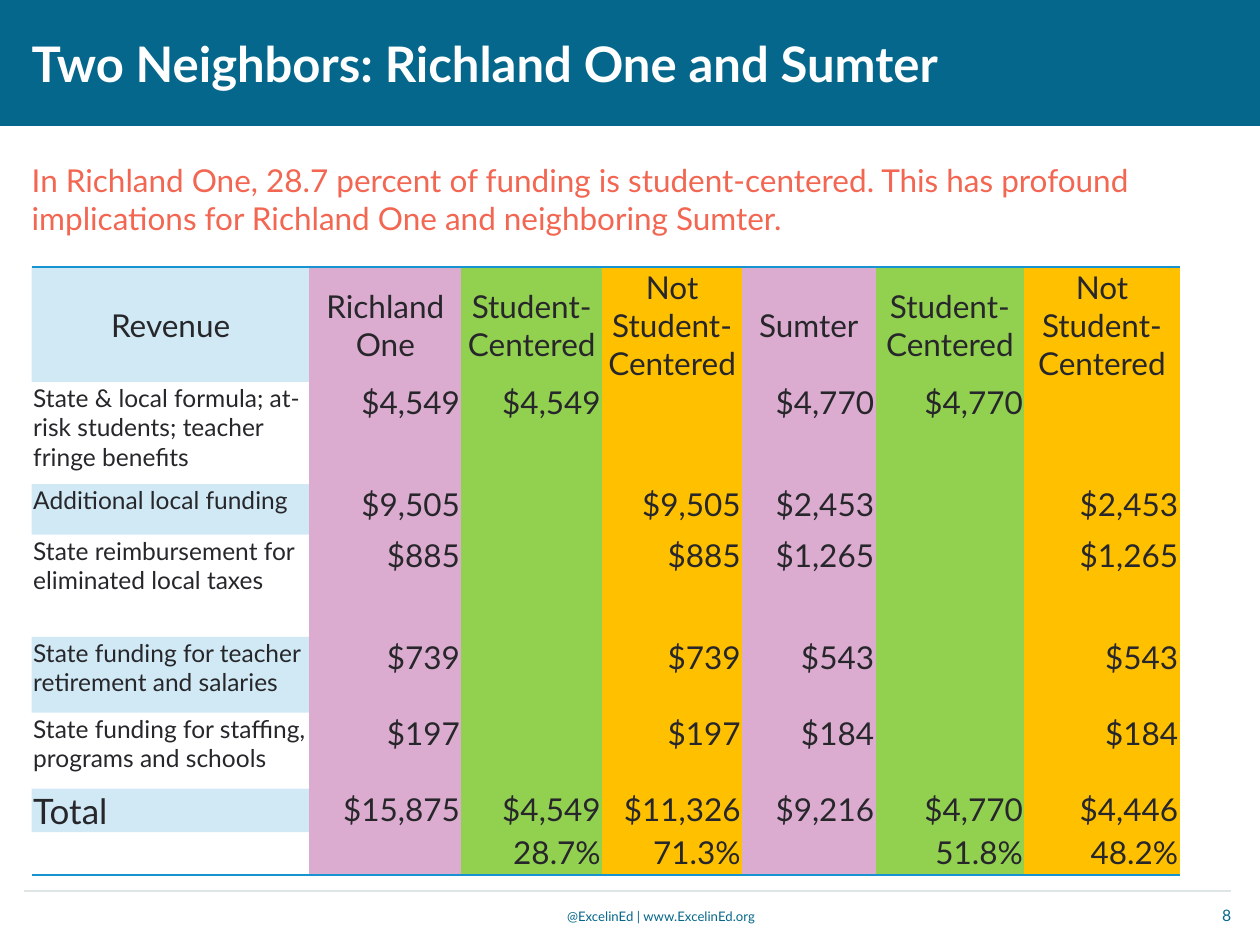
"""Build the slide comparing school funding in Richland One and Sumter."""
from dataclasses import dataclass

from lxml import etree
from pptx import Presentation
from pptx.dml.color import RGBColor
from pptx.enum.shapes import MSO_CONNECTOR, MSO_SHAPE
from pptx.enum.text import MSO_ANCHOR, MSO_AUTO_SIZE, PP_ALIGN
from pptx.oxml import parse_xml
from pptx.oxml.ns import nsdecls, qn
from pptx.util import Cm, Pt

LEFT, CENTER, RIGHT = PP_ALIGN.LEFT, PP_ALIGN.CENTER, PP_ALIGN.RIGHT
TOP, MIDDLE = MSO_ANCHOR.TOP, MSO_ANCHOR.MIDDLE
NO_GRID_STYLE = "{2D5ABB26-0587-4C30-8999-92F81FD0307C}"


@dataclass(frozen=True)
class Theme:
    """Colours and type sizes of the deck."""

    font: str = "Lato"
    teal: str = "05678B"
    white: str = "FFFFFF"
    coral: str = "F26652"
    ink: str = "27272B"
    rule: str = "DFE4E5"
    blue: str = "1893D1"
    district: str = "DBACCF"
    centered: str = "92D050"
    not_centered: str = "FFC000"
    title: float = 28
    lead: float = 18
    total: float = 20
    amount: float = 18
    label: float = 14
    number: float = 9
    footer: float = 7.5


@dataclass(frozen=True)
class Column:
    """A table column with its heading, width in cm and fill."""

    heading: str
    width: float
    fill: str | None = None


@dataclass(frozen=True)
class Row:
    """A table row with its height in cm, label and amounts."""

    height: float
    label: str
    amounts: tuple[str, ...]
    label_size: float


@dataclass(frozen=True)
class Box:
    """A rectangle in cm."""

    left: float
    top: float
    width: float
    height: float

    def lengths(self) -> tuple[Cm, Cm, Cm, Cm]:
        """Return the rectangle as lengths."""
        return Cm(self.left), Cm(self.top), Cm(self.width), Cm(self.height)


T = Theme()
COLUMNS = (
    Column("Revenue", 5.6),
    Column("Richland One", 3.06, T.district),
    Column("Student-Centered", 2.84, T.centered),
    Column("Not Student-Centered", 2.82, T.not_centered),
    Column("Sumter", 2.69, T.district),
    Column("Student-Centered", 3, T.centered),
    Column("Not Student-Centered", 3.13, T.not_centered),
)
ROWS = (
    Row(2.06, "State & local formula; at-risk students; teacher fringe benefits",
        ("$4,549", "$4,549", "", "$4,770", "$4,770", ""), T.label),
    Row(1.02, "Additional local funding",
        ("$9,505", "", "$9,505", "$2,453", "", "$2,453"), T.label),
    Row(2.06, "State reimbursement for eliminated local taxes",
        ("$885", "", "$885", "$1,265", "", "$1,265"), T.label),
    Row(1.53, "State funding for teacher retirement and salaries",
        ("$739", "", "$739", "$543", "", "$543"), T.label),
    Row(1.53, "State funding for staffing, programs and schools",
        ("$197", "", "$197", "$184", "", "$184"), T.label),
    Row(0.86, "Total",
        ("$15,875", "$4,549", "$11,326", "$9,216", "$4,770", "$4,446"), T.total),
    Row(0.86, "", ("", "28.7%", "71.3%", "", "51.8%", "48.2%"), T.label),
)
HEADER_HEIGHT = 2.3


def write(tf, text: str, size: float, color: str, align=LEFT, bold: bool = False) -> None:
    """Put one formatted paragraph into a text frame."""
    p = tf.paragraphs[0]
    p.text = text
    p.alignment = align
    p.font.name = T.font
    p.font.size = Pt(size)
    p.font.bold = bold
    p.font.color.rgb = RGBColor.from_string(color)


def add_text(slide, box: Box, text: str, size: float, color: str, align=LEFT,
             anchor=MIDDLE, side: float = 0.25, wrap: bool = True) -> None:
    """Add a text box with equal side insets in cm."""
    tf = slide.shapes.add_textbox(*box.lengths()).text_frame
    tf.word_wrap = wrap
    tf.vertical_anchor = anchor
    tf.margin_left = tf.margin_right = Cm(side)
    write(tf, text, size, color, align)


def add_title(slide, text: str) -> None:
    """Draw the title bar and set the title on it."""
    bar = slide.shapes.add_shape(MSO_SHAPE.RECTANGLE, *Box(0, 0, 25.4, 2.54).lengths())
    bar.shadow.inherit = False
    bar.fill.solid()
    bar.fill.fore_color.rgb = RGBColor.from_string(T.teal)
    bar.line.fill.background()
    title = slide.shapes.title
    bar._element.addnext(title._element)
    title.left, title.top, title.width, title.height = Box(0.64, 0, 22.1, 2.54).lengths()
    tf = title.text_frame
    tf.auto_size = MSO_AUTO_SIZE.NONE
    tf.vertical_anchor = MIDDLE
    tf.margin_left = tf.margin_right = 0
    write(tf, text, T.title, T.white, bold=True)


def add_rule(slide) -> None:
    """Draw the thin rule above the footer."""
    line = slide.shapes.add_connector(
        MSO_CONNECTOR.STRAIGHT, Cm(0.48), Cm(17.96), Cm(24.82), Cm(17.96))
    line.line.color.rgb = RGBColor.from_string(T.rule)
    line.line.width = Pt(0.75)
    etree.SubElement(line._element.spPr, qn("a:effectLst"))


def fill_cell(cell, color: str | None, tinted: bool) -> None:
    """Fill a cell with its column colour, a light blue tint or nothing."""
    if not color and not tinted:
        cell.fill.background()
        return
    cell.fill.solid()
    cell.fill.fore_color.rgb = RGBColor.from_string(color or T.blue)
    if not color:
        clr = cell._tc.tcPr.find(".//" + qn("a:srgbClr"))
        etree.SubElement(clr, qn("a:alpha"), val="20000")


def add_border(cell, side: str) -> None:
    """Add a one-point blue border to one side of a cell."""
    cell._tc.get_or_add_tcPr().insert(0, parse_xml(
        f'<a:{side} {nsdecls("a")} w="12700"><a:solidFill>'
        f'<a:srgbClr val="{T.blue}"/></a:solidFill></a:{side}>'))


def add_revenue_table(slide) -> None:
    """Add the revenue table with its coloured columns."""
    header = Row(HEADER_HEIGHT, COLUMNS[0].heading,
                 tuple(c.heading for c in COLUMNS[1:]), T.amount)
    rows = (header, *ROWS)
    box = Box(0.64, 5.38, sum(c.width for c in COLUMNS), sum(r.height for r in rows))
    table = slide.shapes.add_table(len(rows), len(COLUMNS), *box.lengths()).table
    table.first_row = table.horz_banding = False
    table._tbl.tblPr.find(qn("a:tableStyleId")).text = NO_GRID_STYLE
    for i, column in enumerate(COLUMNS):
        table.columns[i].width = Cm(column.width)
    for i, row in enumerate(rows):
        table.rows[i].height = Cm(row.height)
        for j, text in enumerate((row.label, *row.amounts)):
            cell = table.cell(i, j)
            cell.margin_left = cell.margin_right = cell.margin_top = Cm(0.03)
            cell.margin_bottom = 0
            cell.vertical_anchor = MIDDLE if i == 0 else TOP
            align = CENTER if i == 0 else RIGHT if j else LEFT
            size = T.amount if j else row.label_size
            write(cell.text_frame, text, size, T.ink, align)
            fill_cell(cell, COLUMNS[j].fill, i % 2 == 0)
            if i in (0, len(rows) - 1):
                add_border(cell, "lnB" if i else "lnT")


def main() -> None:
    """Build and save the slide."""
    prs = Presentation()
    prs.slide_width, prs.slide_height = Cm(25.4), Cm(19.05)
    slide = prs.slides.add_slide(prs.slide_layouts[5])
    add_title(slide, "Two Neighbors: Richland One and Sumter")
    add_rule(slide)
    add_text(slide, Box(10.97, 18.19, 4.5, 0.58), "@ExcelinEd | www.ExcelinEd.org",
             T.footer, T.teal, RIGHT, TOP, wrap=False)
    add_text(slide, Box(23.95, 18.11, 1.12, 0.69), "8", T.number, T.teal, RIGHT)
    add_text(slide, Box(0.64, 2.74, 24.13, 2.54),
             "In Richland One, 28.7 percent of funding is student-centered. This has "
             "profound implications for Richland One and neighboring Sumter.",
             T.lead, T.coral, side=0)
    add_revenue_table(slide)
    prs.save("out.pptx")


if __name__ == "__main__":
    main()
